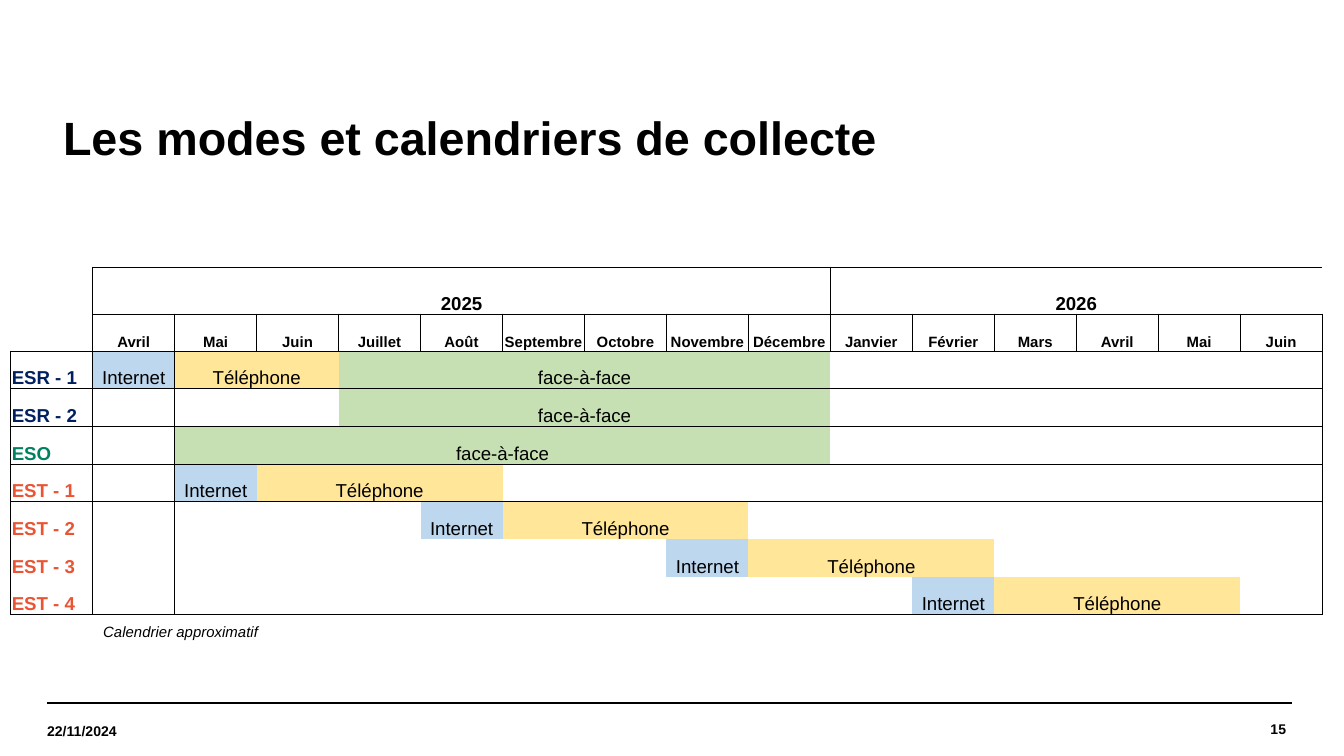
from collections import defaultdict
from lxml.etree import SubElement
from pptx import Presentation
from pptx.dml.color import RGBColor
from pptx.enum.shapes import MSO_CONNECTOR
from pptx.enum.text import MSO_ANCHOR, MSO_AUTO_SIZE, PP_ALIGN
from pptx.oxml.ns import qn
from pptx.util import Pt

# Colours
BLACK = RGBColor(0x00, 0x00, 0x00)
NAVY = RGBColor(0x00, 0x20, 0x60)
GREEN = RGBColor(0x00, 0x82, 0x60)
ORANGE = RGBColor(0xEA, 0x54, 0x33)
FILLS = {
    "Internet": RGBColor(0xBD, 0xD7, 0xEE),
    "Téléphone": RGBColor(0xFF, 0xE6, 0x99),
    "face-à-face": RGBColor(0xC6, 0xE0, 0xB4),
}

# Content
TITLE = "Les modes et calendriers de collecte"
NOTE = "Calendrier approximatif"
DATE, PAGE = "22/11/2024", "15"
YEARS = [("2025", 1, 9), ("2026", 10, 6)]  # text, first column, columns
MONTHS = ["Avril", "Mai", "Juin", "Juillet", "Août", "Septembre", "Octobre",
          "Novembre", "Décembre", "Janvier", "Février", "Mars", "Avril",
          "Mai", "Juin"]
# Survey groups: colour, then label and phases (mode, first column, columns)
GROUPS = [
    (NAVY, [
        ("ESR - 1", [("Internet", 1, 1), ("Téléphone", 2, 2), ("face-à-face", 4, 6)]),
        ("ESR - 2", [("face-à-face", 4, 6)]),
    ]),
    (GREEN, [("ESO", [("face-à-face", 2, 8)])]),
    (ORANGE, [
        ("EST - 1", [("Internet", 2, 1), ("Téléphone", 3, 3)]),
        ("EST - 2", [("Internet", 5, 1), ("Téléphone", 6, 3)]),
        ("EST - 3", [("Internet", 8, 1), ("Téléphone", 9, 3)]),
        ("EST - 4", [("Internet", 11, 1), ("Téléphone", 12, 3)]),
    ]),
]

# Layout
COL_W = 43.92
ROW_HEIGHTS = [20, 25.2, 19.8] + [20.2] * sum(len(rows) for _, rows in GROUPS)
N_COLS = len(MONTHS) + 1
NO_STYLE = "{2D5ABB26-0587-4C30-8999-92F81FD0307C}"


def style(p, size, color=BLACK, bold=False, italic=False, align=PP_ALIGN.LEFT):
    p.alignment = align
    for r in p.runs:
        f = r.font
        f.name, f.size, f.bold, f.italic = "Arial", Pt(size), bold, italic
        f.color.rgb = color


def add_text(s, text, left, top, width, height, size, inset=True, **look):
    tf = s.shapes.add_textbox(Pt(left), Pt(top), Pt(width), Pt(height)).text_frame
    tf.word_wrap = True
    if not inset:
        tf.margin_left = tf.margin_right = tf.margin_top = tf.margin_bottom = 0
        tf.vertical_anchor = MSO_ANCHOR.MIDDLE
    tf.text = text
    style(tf.paragraphs[0], size, **look)
    return tf


def fill_cell(table, row, col, text, size, span=1, fill=None, **look):
    cell = table.cell(row, col)
    if span > 1:
        cell.merge(table.cell(row, col + span - 1))
    cell.text = text
    style(cell.text_frame.paragraphs[0], size, **look)
    if fill is not None:
        cell.fill.solid()
        cell.fill.fore_color.rgb = fill


def outline(edges, top, bottom, left, right):
    for row in range(top, bottom + 1):
        edges[row, left].add("L")
        edges[row, right].add("R")
    for col in range(left, right + 1):
        edges[top, col].add("T")
        edges[bottom, col].add("B")


def draw_edges(table, edges):
    for (row, col), sides in edges.items():
        tc_pr = table.cell(row, col)._tc.get_or_add_tcPr()
        for side in "LRTB":
            if side in sides:
                ln = SubElement(tc_pr, qn(f"a:ln{side}"), w=str(Pt(0.5)))
                solid = SubElement(ln, qn("a:solidFill"))
                SubElement(solid, qn("a:srgbClr"), val=str(BLACK))


def add_calendar(s):
    table = s.shapes.add_table(len(ROW_HEIGHTS), N_COLS, Pt(5.76), Pt(123.1),
                               Pt(COL_W * N_COLS), Pt(sum(ROW_HEIGHTS))).table
    table.first_row = table.horz_banding = False
    table._tbl.tblPr.find(qn("a:tableStyleId")).text = NO_STYLE
    for column in table.columns:
        column.width = Pt(COL_W)
    for row, height in zip(table.rows, ROW_HEIGHTS):
        row.height = Pt(height)
    for cell in table.iter_cells():
        cell.margin_left = cell.margin_right = cell.margin_top = Pt(0.6)
        cell.margin_bottom = 0
        cell.vertical_anchor = MSO_ANCHOR.BOTTOM
        # Small type keeps empty cells from stretching their row
        cell.text_frame.paragraphs[0]._p.get_or_add_endParaRPr().set("sz", "800")

    # Borders: one box per year, month, group label and group body
    edges = defaultdict(set)
    for _, col, span in YEARS:
        outline(edges, 1, 1, col, col + span - 1)
    for col in range(1, N_COLS):
        outline(edges, 2, 2, col, col)
    first = 3
    for _, rows in GROUPS:
        last = first + len(rows) - 1
        outline(edges, first, last, 0, 0)
        outline(edges, first, last, 1, N_COLS - 1)
        first = last + 1
    draw_edges(table, edges)

    # Headers
    center = PP_ALIGN.CENTER
    for text, col, span in YEARS:
        fill_cell(table, 1, col, text, 10, span, bold=True, align=center)
    for col, month in enumerate(MONTHS, 1):
        fill_cell(table, 2, col, month, 8, bold=True, align=center)

    # Surveys and their collection phases
    surveys = [(color, *survey) for color, rows in GROUPS for survey in rows]
    for row, (color, label, phases) in enumerate(surveys, 3):
        fill_cell(table, row, 0, label, 10, color=color, bold=True)
        for mode, col, span in phases:
            fill_cell(table, row, col, mode, 10, span, FILLS[mode], align=center)


def main():
    prs = Presentation()
    prs.slide_width, prs.slide_height = Pt(720), Pt(405)
    s = prs.slides.add_slide(prs.slide_layouts[5])

    # Footer rule, page number and date
    for left in (25.2, 28.1):
        rule = s.shapes.add_connector(MSO_CONNECTOR.STRAIGHT, Pt(left), Pt(376.6),
                                      Pt(left + 663.8), Pt(376.6))
        rule.line.color.rgb = BLACK
        rule.line.width = Pt(0.8)
        SubElement(rule._element.spPr, qn("a:effectLst"))
    add_text(s, PAGE, 582.5, 376.6, 106.5, 28, 7.5, inset=False,
             bold=True, align=PP_ALIGN.RIGHT)
    add_text(s, DATE, 25.2, 378, 92.2, 27.4, 7.5, inset=False, bold=True)

    # Title
    title = s.shapes.title
    title.left, title.top, title.width, title.height = Pt(25.2), Pt(54), Pt(663.1), Pt(42.5)
    tf = title.text_frame
    tf.text = TITLE
    tf.word_wrap = True
    tf.auto_size = MSO_AUTO_SIZE.NONE
    tf.margin_left = Pt(8.6)
    tf.vertical_anchor = MSO_ANCHOR.MIDDLE
    tf.paragraphs[0].line_spacing = 0.9
    style(tf.paragraphs[0], 25, bold=True)

    # Calendar and its note
    add_calendar(s)
    note = add_text(s, NOTE, 48.2, 329.8, 289.4, 17, 8, italic=True)
    note.auto_size = MSO_AUTO_SIZE.SHAPE_TO_FIT_TEXT

    prs.save("out.pptx")


if __name__ == "__main__":
    main()
